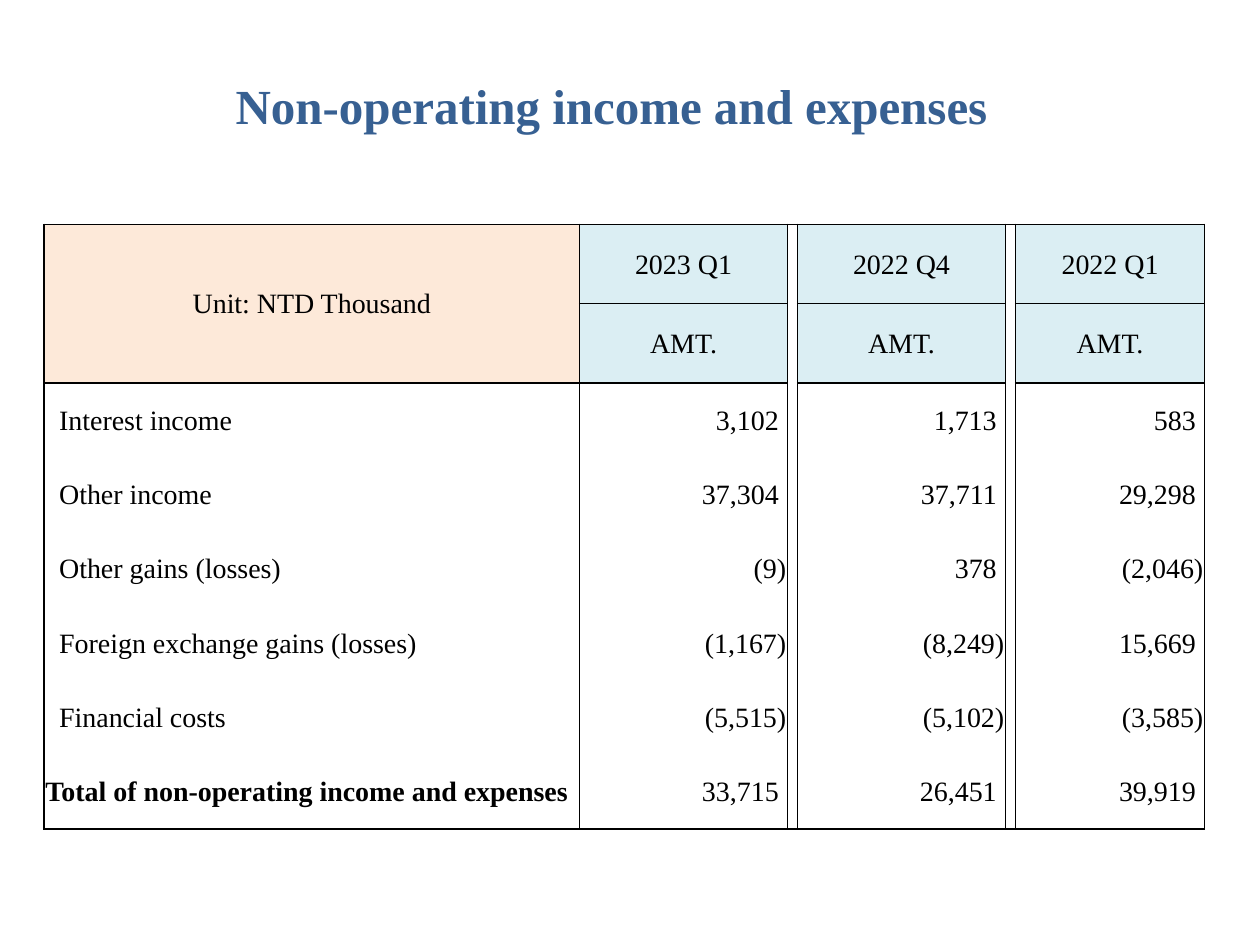
from lxml.etree import SubElement
from pptx import Presentation
from pptx.dml.color import RGBColor
from pptx.enum.text import MSO_ANCHOR, PP_ALIGN
from pptx.oxml.ns import qn
from pptx.util import Inches, Pt

THEME = {
    "font": "Times New Roman",
    "title_size": 28,
    "table_size": 16,
    "title": "376092",
    "text": "000000",
    "border": "000000",
    "unit_fill": "FDE9D9",
    "period_fill": "DBEEF3",
}

COLUMN_WIDTHS = [4.25, 1.65, 0.08, 1.65, 0.08, 1.5]
HEADER_HEIGHT, BODY_HEIGHT = 0.63, 0.59
HEADER_ROWS = 2
VALUE_COLUMNS = [1, 3, 5]
PERIODS = ["2023 Q1", "2022 Q4", "2022 Q1"]
ITEMS = [
    ("Interest income", ["3,102", "1,713", "583"]),
    ("Other income", ["37,304", "37,711", "29,298"]),
    ("Other gains (losses)", ["(9)", "378", "(2,046)"]),
    ("Foreign exchange gains (losses)", ["(1,167)", "(8,249)", "15,669"]),
    ("Financial costs", ["(5,515)", "(5,102)", "(3,585)"]),
    ("Total of non-operating income and expenses", ["33,715", "26,451", "39,919"]),
]
ROW_COUNT = HEADER_ROWS + len(ITEMS)


def write_text(text_frame, text, size, color, alignment, bold=False):
    paragraph = text_frame.paragraphs[0]
    paragraph.alignment = alignment
    run = paragraph.add_run()
    run.text = text
    font_format = {"name": THEME["font"], "size": Pt(size), "bold": bold}
    for name, value in font_format.items():
        setattr(run.font, name, value)
    run.font.color.rgb = RGBColor.from_string(color)


def set_borders(cell, visible_sides):
    """Draw the named sides (L, R, T, B) and hide the others."""
    properties = cell._tc.get_or_add_tcPr()
    for side in "LRTB":
        line = SubElement(properties, qn(f"a:ln{side}"), w=str(Pt(1)))
        if side in visible_sides:
            fill = SubElement(line, qn("a:solidFill"))
            SubElement(fill, qn("a:srgbClr"), val=THEME["border"])
        else:
            SubElement(line, qn("a:noFill"))


presentation = Presentation()
presentation.slide_width = Inches(10)
presentation.slide_height = Inches(7.5)
slide = presentation.slides.add_slide(presentation.slide_layouts[5])

# Title
title = slide.shapes.title
title_place = {"left": 1.77, "top": 0.52, "width": 8.11, "height": 0.96}
for name, value in title_place.items():
    setattr(title, name, Inches(value))
title.text_frame.vertical_anchor = MSO_ANCHOR.TOP
title.text_frame.margin_top = Inches(0.08)
write_text(title.text_frame, "Non-operating income and expenses",
           THEME["title_size"], THEME["title"], PP_ALIGN.LEFT, bold=True)

# Table grid
row_heights = [HEADER_HEIGHT] * HEADER_ROWS + [BODY_HEIGHT] * len(ITEMS)
table = slide.shapes.add_table(
    ROW_COUNT, len(COLUMN_WIDTHS), Inches(0.35), Inches(1.78),
    Inches(sum(COLUMN_WIDTHS)), Inches(sum(row_heights))).table
table.first_row = False
table.horz_banding = False
for column, width in zip(table.columns, COLUMN_WIDTHS):
    column.width = Inches(width)
for row, height in zip(table.rows, row_heights):
    row.height = Inches(height)

# Cell borders, fills and margins
cell_format = {
    "margin_left": Inches(0.01),
    "margin_right": Inches(0.01),
    "margin_top": Inches(0.01),
    "margin_bottom": 0,
    "vertical_anchor": MSO_ANCHOR.MIDDLE,
}
for column_index in range(len(COLUMN_WIDTHS)):
    rules = {0, ROW_COUNT}
    header_fill = None
    if column_index == 0:
        rules |= {HEADER_ROWS}
        header_fill = THEME["unit_fill"]
    elif column_index in VALUE_COLUMNS:
        rules |= {1, HEADER_ROWS}
        header_fill = THEME["period_fill"]
    for row_index in range(ROW_COUNT):
        cell = table.cell(row_index, column_index)
        for name, value in cell_format.items():
            setattr(cell, name, value)
        top = "T" if row_index in rules else ""
        bottom = "B" if row_index + 1 in rules else ""
        set_borders(cell, "LR" + top + bottom)
        if header_fill and row_index < HEADER_ROWS:
            cell.fill.solid()
            cell.fill.fore_color.rgb = RGBColor.from_string(header_fill)
        else:
            cell.fill.background()

# Header text
unit_cell = table.cell(0, 0)
unit_cell.merge(table.cell(HEADER_ROWS - 1, 0))
headers = [(unit_cell, "Unit: NTD Thousand")]
for column_index, period in zip(VALUE_COLUMNS, PERIODS):
    headers.append((table.cell(0, column_index), period))
    headers.append((table.cell(1, column_index), "AMT."))
for cell, text in headers:
    write_text(cell.text_frame, text, THEME["table_size"], THEME["text"], PP_ALIGN.CENTER)

# Items: positive amounts stop short of the closing bracket of negative ones
for row_index, (label, amounts) in enumerate(ITEMS, start=HEADER_ROWS):
    is_total = row_index == ROW_COUNT - 1
    cell = table.cell(row_index, 0)
    if not is_total:
        cell.margin_left = Inches(0.12)
    write_text(cell.text_frame, label, THEME["table_size"], THEME["text"],
               PP_ALIGN.LEFT, bold=is_total)
    for column_index, amount in zip(VALUE_COLUMNS, amounts):
        cell = table.cell(row_index, column_index)
        if not amount.endswith(")"):
            cell.margin_right = Inches(0.07)
        write_text(cell.text_frame, amount, THEME["table_size"], THEME["text"],
                   PP_ALIGN.RIGHT)

presentation.save("out.pptx")
